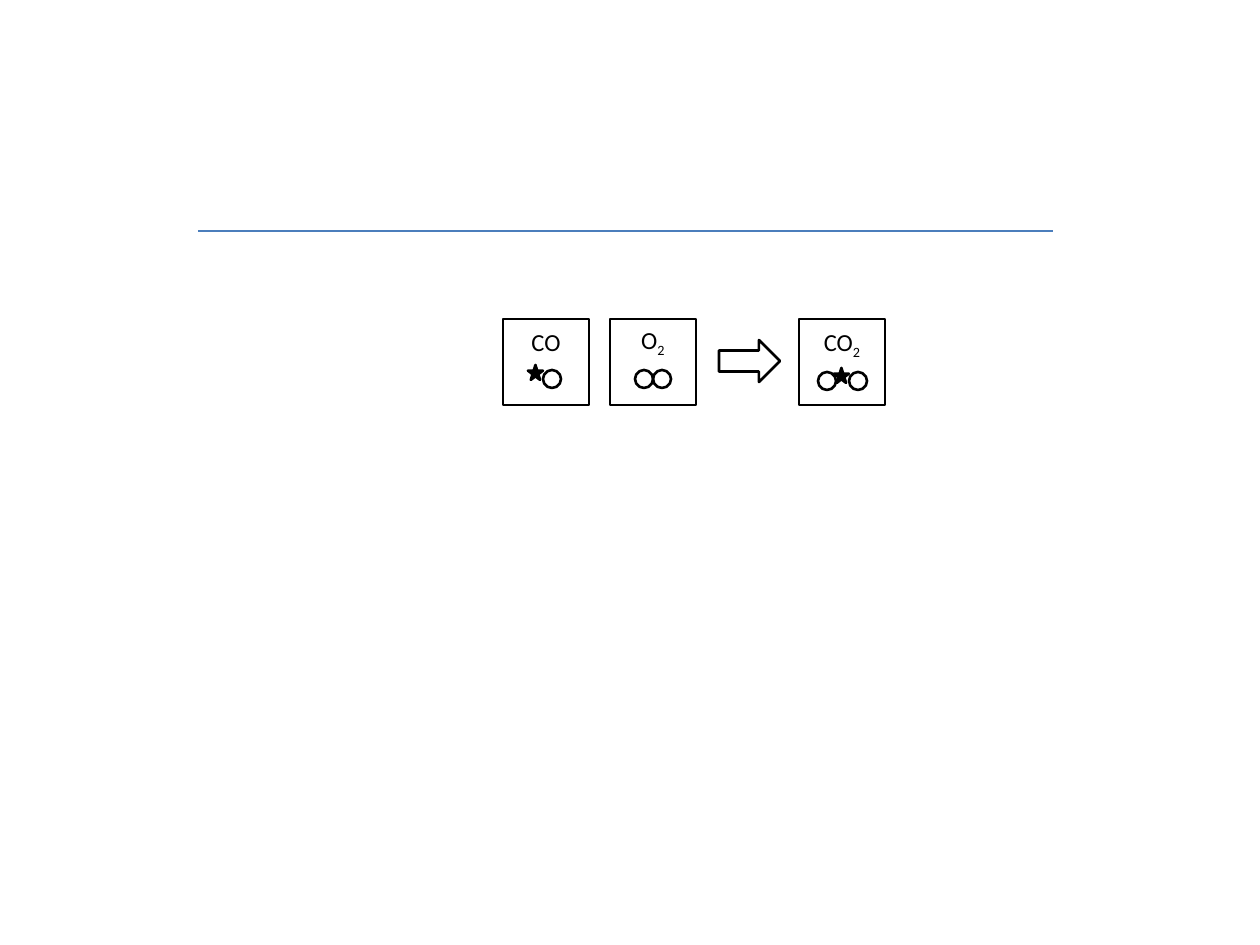
from pptx import Presentation
from pptx.dml.color import RGBColor
from pptx.enum.shapes import MSO_CONNECTOR, MSO_SHAPE
from pptx.enum.text import MSO_AUTO_SIZE, PP_ALIGN
from pptx.oxml.ns import qn
from pptx.util import Inches, Pt
from lxml import etree

PX_PER_INCH = 126
COLORS = {"ink": "000000", "rule": "4B7EBC"}
BOX = 86
BOX_TOP = 319
LABEL_HEIGHT = 43
OXYGEN = 18
CARBON = 15


def px(length):
    return Inches(length / PX_PER_INCH)


def color(name):
    return RGBColor.from_string(COLORS[name])


def add_rule(shapes, left, right, y):
    rule = shapes.add_connector(MSO_CONNECTOR.STRAIGHT, px(left), px(y), px(right), px(y))
    rule.line.color.rgb = color("rule")
    rule.line.width = Pt(0.75)
    etree.SubElement(rule._element.spPr, qn("a:effectLst"))


def add_outline(shapes, kind, left, top, width, height, filled=False):
    outline = shapes.add_shape(kind, px(left), px(top), px(width), px(height))
    outline.shadow.inherit = False
    if filled:
        outline.fill.solid()
        outline.fill.fore_color.rgb = color("ink")
    else:
        outline.fill.background()
    outline.line.color.rgb = color("ink")
    outline.line.width = Pt(1.5)


def add_formula(shapes, element, count, left, top, width):
    label = shapes.add_textbox(px(left), px(top), px(width), px(LABEL_HEIGHT))
    frame = label.text_frame
    frame.word_wrap = False
    frame.auto_size = MSO_AUTO_SIZE.SHAPE_TO_FIT_TEXT
    formula = frame.paragraphs[0]
    formula.alignment = PP_ALIGN.CENTER
    formula.font.name = "Calibri"
    formula.font.size = Pt(14)
    formula.font.color.rgb = color("ink")
    formula.add_run().text = element
    if count:
        subscript = formula.add_run()
        subscript.text = count
        subscript.font._element.set("baseline", "-25000")


def add_molecule(slide, left, formula, label_top, label_width, carbons, oxygens):
    shapes = slide.shapes.add_group_shape().shapes
    label_left = left + (BOX - label_width) / 2
    add_formula(shapes, *formula, label_left, BOX_TOP + label_top, label_width)
    for x, y in carbons:
        add_outline(shapes, MSO_SHAPE.STAR_5_POINT, left + x, BOX_TOP + y, CARBON, CARBON, filled=True)
    for x, y in oxygens:
        add_outline(shapes, MSO_SHAPE.OVAL, left + x, BOX_TOP + y, OXYGEN, OXYGEN)
    add_outline(shapes, MSO_SHAPE.RECTANGLE, left, BOX_TOP, BOX, BOX)


def main():
    deck = Presentation()
    deck.slide_width, deck.slide_height = px(1260), px(945)
    slide = deck.slides.add_slide(deck.slide_layouts[6])
    add_rule(slide.shapes, 198, 1053, 231)
    add_molecule(slide, 610, ("O", "2"), 0, 50, [], [(43, 51), (25, 51)])
    add_molecule(slide, 503, ("CO", ""), 2, 55, [(25, 46)], [(40, 51)])
    add_molecule(slide, 799, ("CO", "2"), 2, 63, [(35, 49)], [(19, 53), (50, 53)])
    add_outline(slide.shapes, MSO_SHAPE.RIGHT_ARROW, 719, 340, 61, 42)
    deck.save("out.pptx")


if __name__ == "__main__":
    main()
